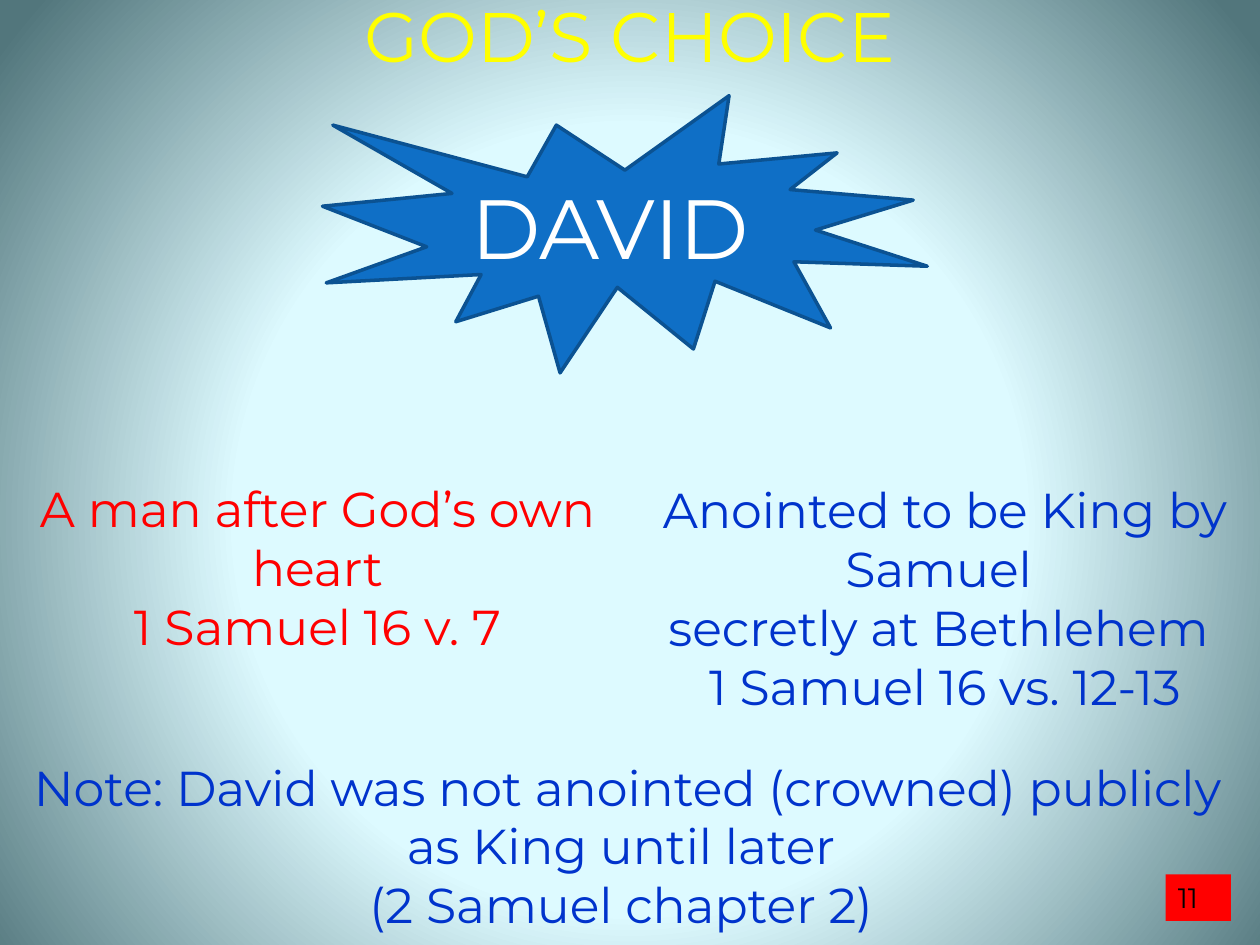
import pptx
import pptx.dml.color
import pptx.enum.shapes
import pptx.enum.text
import pptx.oxml
import pptx.oxml.ns
import pptx.util

Inches = pptx.util.Inches
Shape = pptx.enum.shapes.MSO_SHAPE
Align = pptx.enum.text.PP_ALIGN
Anchor = pptx.enum.text.MSO_ANCHOR

COLORS = {
    "glow": "DEFBFF", "pale": "DDFAFF", "edge": "52767C",
    "burst": "0F6FC6", "burst_line": "0B5292", "white": "FFFFFF",
    "black": "000000", "blue": "0033CC", "red": "FF0000", "yellow": "FFFF00",
}


class SlideBuilder:
    font = "Montserrat"

    def __init__(self, page):
        self.page = page

    def color(self, name):
        return pptx.dml.color.RGBColor.from_string(COLORS[name])

    def background(self, stops):
        """Radial gradient centred below the middle of the slide."""
        self.page.background.fill.gradient()
        old = next(self.page.element.iter(pptx.oxml.ns.qn("a:gradFill")))
        marks = "".join(
            f'<a:gs pos="{place * 1000}"><a:srgbClr val="{COLORS[name]}"/></a:gs>'
            for place, name in stops)
        old.getparent().replace(old, pptx.oxml.parse_xml(
            f'<a:gradFill {pptx.oxml.ns.nsdecls("a")} rotWithShape="1">'
            f'<a:gsLst>{marks}</a:gsLst><a:path path="circle">'
            '<a:fillToRect l="10000" t="110000" r="10000" b="100000"/>'
            '</a:path></a:gradFill>'))

    def fill_text(self, box, lines, size, color, align=Align.CENTER, anchor=Anchor.TOP):
        frame = box.text_frame
        frame.word_wrap = True
        frame.auto_size = pptx.enum.text.MSO_AUTO_SIZE.NONE
        frame.vertical_anchor = anchor
        for index, line in enumerate(lines):
            para = frame.add_paragraph() if index else frame.paragraphs[0]
            para.alignment = align
            span = para.add_run()
            span.text = line
            span.font.name = self.font
            span.font.size = pptx.util.Pt(size)
            span.font.color.rgb = self.color(color)

    def title(self, place, text, size, color):
        box = self.page.shapes.title
        box.left, box.top, box.width, box.height = map(Inches, place)
        self.fill_text(box, [text], size, color)

    def text(self, place, lines, size, color):
        box = self.page.shapes.add_textbox(*map(Inches, place))
        self.fill_text(box, lines, size, color)

    def shape(self, kind, place, fill, text, size, color, line=None, **layout):
        box = self.page.shapes.add_shape(kind, *map(Inches, place))
        box.shadow.inherit = False
        box.fill.solid()
        box.fill.fore_color.rgb = self.color(fill)
        if line:
            box.line.color.rgb = self.color(line)
            box.line.width = pptx.util.Pt(2)
        else:
            box.line.fill.background()
        self.fill_text(box, [text], size, color, **layout)


def main():
    deck = pptx.Presentation()
    deck.slide_width, deck.slide_height = Inches(10), Inches(7.5)
    builder = SlideBuilder(deck.slides.add_slide(deck.slide_layouts[5]))
    builder.background([(0, "glow"), (50, "pale"), (100, "edge")])

    # Title and starburst
    builder.title((0, -0.11, 10, 0.77), "GOD’S CHOICE", 40, "yellow")
    builder.shape(Shape.EXPLOSION1, (2.56, 0.76, 4.8, 2.2), "burst", "DAVID ",
                  48, "white", line="burst_line", anchor=Anchor.MIDDLE)

    # Two statements side by side
    builder.text((0.04, 3.75, 4.96, 1.51),
                 ["A man after God’s own heart", "1 Samuel 16 v. 7"], 28, "red")
    builder.text((5, 3.76, 5, 1.99),
                 ["Anointed to be King by Samuel ", "secretly at Bethlehem ",
                  "1 Samuel 16 vs. 12-13"], 28, "blue")

    # Closing note
    builder.text((-0.04, 5.96, 10.04, 1.51),
                 ["Note: David was not anointed (crowned) publicly as King until later ",
                  "(2 Samuel chapter 2) "], 28, "blue")

    # Page number
    builder.shape(Shape.RECTANGLE, (9.25, 6.94, 0.52, 0.37), "red", "11",
                  16, "black", align=Align.LEFT)

    deck.save("out.pptx")


if __name__ == "__main__":
    main()
